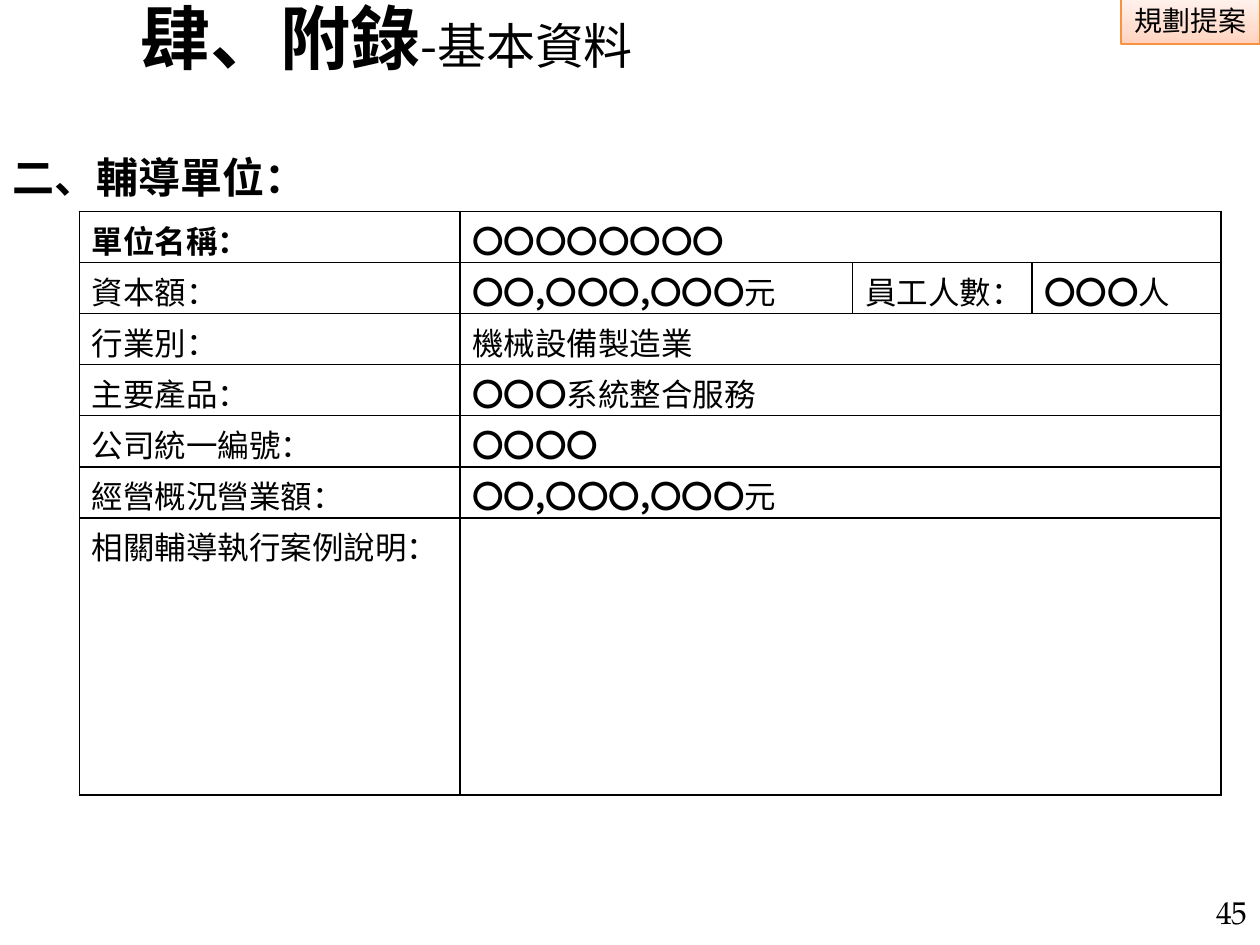
from dataclasses import dataclass

from lxml import etree
from pptx import Presentation
from pptx.dml.color import RGBColor
from pptx.enum import shapes, text
from pptx.oxml import ns
from pptx.util import Cm, Pt

BLACK = RGBColor(0x00, 0x00, 0x00)
ORANGE = RGBColor(0xF6, 0x92, 0x40)
TAG_STOPS = (
    (0, RGBColor(0xFF, 0xD2, 0xBD)),
    (0.35, RGBColor(0xFF, 0xDE, 0xD0)),
    (1, RGBColor(0xFF, 0xF2, 0xED)),
)
CJK_FONT = "Noto Sans CJK SC"
NUMBER_FONT = "TeX Gyre Pagella"
COLUMN_WIDTHS = (7.67, 7.92, 3.61, 3.81)
ROW_HEIGHT = 1.03
LAST_ROW_HEIGHT = 5.59


@dataclass
class Span:
    text: str
    size: float = 18
    bold: bool = False
    font: str = CJK_FONT


@dataclass
class Entry:
    label: Span
    value: tuple[Span, ...] = ()
    extra_label: tuple[Span, ...] = ()
    extra_value: tuple[Span, ...] = ()


AMOUNT = (Span("〇〇,〇〇〇,〇〇〇", bold=True), Span("元"))
ENTRIES = (
    Entry(Span("單位名稱：", bold=True), (Span("〇〇〇〇〇〇〇〇", bold=True),)),
    Entry(Span("資本額："), AMOUNT, (Span("員工人數："),),
          (Span("〇〇〇", bold=True), Span("人"))),
    Entry(Span("行業別："), (Span("機械設備製造業"),)),
    Entry(Span("主要產品："), (Span("〇〇〇", bold=True), Span("系統整合服務"))),
    Entry(Span("公司統一編號："), (Span("〇〇〇〇", bold=True),)),
    Entry(Span("經營概況營業額："), AMOUNT),
    Entry(Span("相關輔導執行案例說明：")),
)


def write(paragraph, spans: tuple[Span, ...]) -> None:
    for span in spans:
        run = paragraph.add_run()
        run.text = span.text
        font = run.font
        font.size = Pt(span.size)
        font.bold = span.bold
        font.color.rgb = BLACK
        font.name = span.font
        east_asian = etree.SubElement(run._r.get_or_add_rPr(), ns.qn("a:ea"))
        east_asian.set("typeface", span.font)


def add_label(slide, left: float, top: float, width: float, height: float, span: Span):
    box = slide.shapes.add_textbox(Cm(left), Cm(top), Cm(width), Cm(height))
    box.text_frame.word_wrap = True
    write(box.text_frame.paragraphs[0], (span,))
    return box


def add_title(slide) -> None:
    title = slide.shapes.title
    title.left, title.top, title.width, title.height = Cm(1.09), Cm(-0.08), Cm(13.41), Cm(1.65)
    frame = title.text_frame
    frame.auto_size = text.MSO_AUTO_SIZE.NONE
    frame.vertical_anchor = text.MSO_ANCHOR.MIDDLE
    paragraph = frame.paragraphs[0]
    paragraph.alignment = text.PP_ALIGN.CENTER
    write(paragraph, (Span("肆、附錄", 40, True), Span("-基本資料", 28)))


def add_tag(slide) -> None:
    tag = slide.shapes.add_shape(
        shapes.MSO_SHAPE.RECTANGLE, Cm(22.6), Cm(-0.05), Cm(2.8), Cm(0.94))
    tag.shadow.inherit = False
    tag.fill.gradient()
    tag.fill.gradient_angle = 90
    stop_list = tag._element.spPr.find(".//" + ns.qn("a:gsLst"))
    etree.SubElement(stop_list, ns.qn("a:gs")).set("pos", "0")
    for stop, (position, color) in zip(tag.fill.gradient_stops, TAG_STOPS):
        stop.position = position
        stop.color.rgb = color
    tag.line.color.rgb = ORANGE
    tag.line.width = Pt(0.75)
    tag.text_frame.word_wrap = False
    write(tag.text_frame.paragraphs[0], (Span("規劃提案", 16),))


def add_borders(cell) -> None:
    properties = cell._tc.get_or_add_tcPr()
    for position, side in enumerate(("a:lnL", "a:lnR", "a:lnT", "a:lnB")):
        line = etree.Element(ns.qn(side), w=str(Pt(1)))
        fill = etree.SubElement(line, ns.qn("a:solidFill"))
        etree.SubElement(fill, ns.qn("a:srgbClr"), val=str(BLACK))
        properties.insert(position, line)


def add_unit_table(slide) -> None:
    heights = [ROW_HEIGHT] * (len(ENTRIES) - 1) + [LAST_ROW_HEIGHT]
    table = slide.shapes.add_table(
        len(ENTRIES), len(COLUMN_WIDTHS), Cm(1.6), Cm(4.26),
        Cm(sum(COLUMN_WIDTHS)), Cm(sum(heights))).table
    table.first_row = False
    table.horz_banding = False
    for column, width in zip(table.columns, COLUMN_WIDTHS):
        column.width = Cm(width)
    for index, (entry, height) in enumerate(zip(ENTRIES, heights)):
        table.rows[index].height = Cm(height)
        if not entry.extra_label:
            table.cell(index, 1).merge(table.cell(index, 3))
        contents = ((entry.label,), entry.value, entry.extra_label, entry.extra_value)
        for cell, spans in zip(table.rows[index].cells, contents):
            cell.fill.background()
            cell.margin_top, cell.margin_bottom = Cm(0.11), Cm(0)
            add_borders(cell)
            write(cell.text_frame.paragraphs[0], spans)
    table.cell(len(ENTRIES) - 1, 0).text_frame.paragraphs[0].alignment = text.PP_ALIGN.JUSTIFY


def main() -> None:
    presentation = Presentation()
    presentation.slide_width, presentation.slide_height = Cm(25.4), Cm(19.05)
    slide = presentation.slides.add_slide(presentation.slide_layouts[5])
    add_tag(slide)
    number = add_label(slide, 23.22, 18.06, 2.18, 0.99, Span("45", font=NUMBER_FONT))
    number.text_frame.vertical_anchor = text.MSO_ANCHOR.MIDDLE
    number.text_frame.paragraphs[0].alignment = text.PP_ALIGN.RIGHT
    number.text_frame.paragraphs[0].line_spacing = Pt(12)
    add_label(slide, 0, 2.92, 25.3, 1.2, Span("二、輔導單位：", 24, True))
    add_unit_table(slide)
    add_title(slide)
    presentation.save("out.pptx")


if __name__ == "__main__":
    main()
